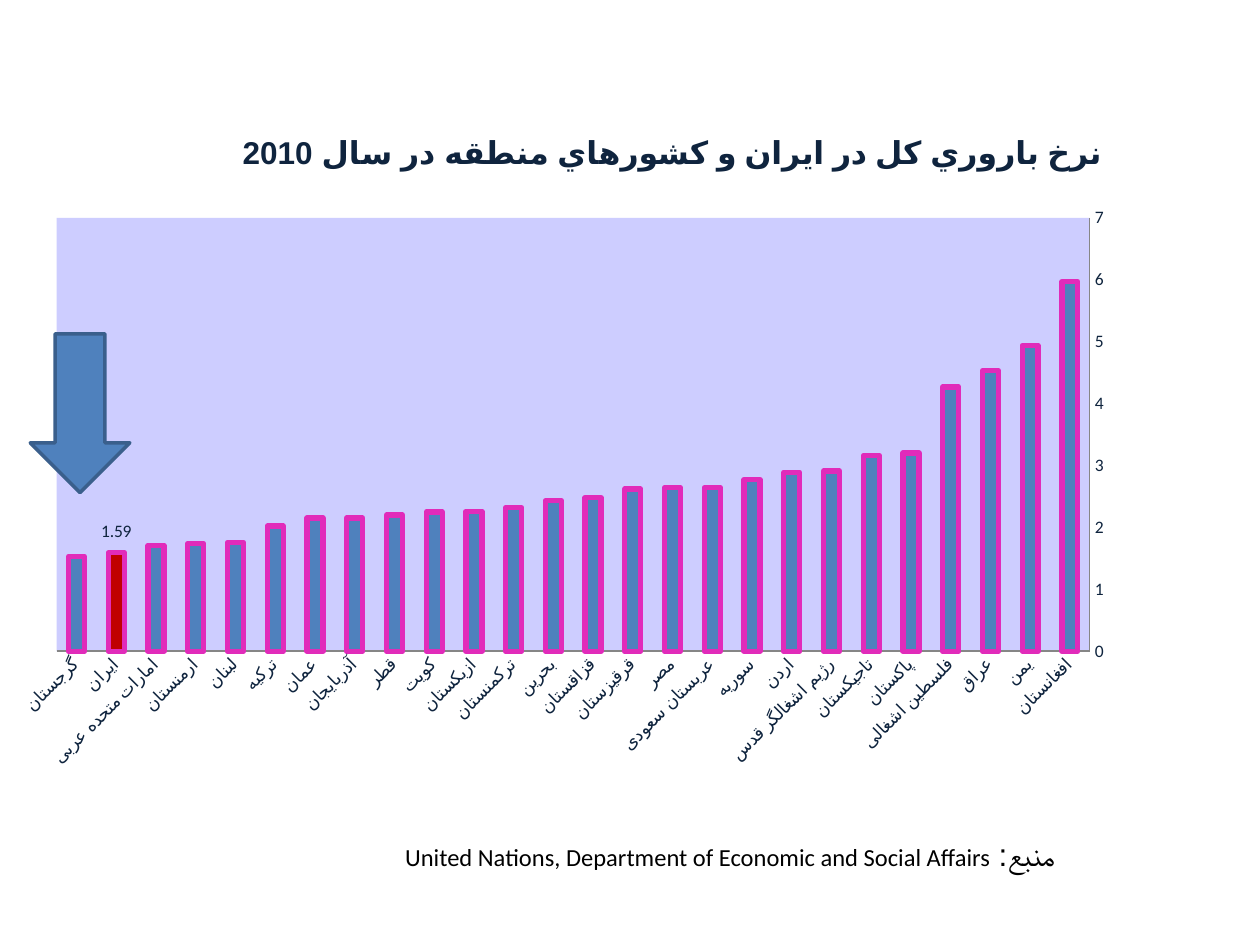
"""Build a slide charting total fertility rates in Iran and its region, 2010."""
from dataclasses import dataclass

from lxml.etree import SubElement
from pptx import Presentation
from pptx.chart.data import CategoryChartData
from pptx.dml.color import RGBColor as RGB
from pptx.enum.chart import XL_CHART_TYPE as ChartType
from pptx.enum.chart import XL_LABEL_POSITION as LabelPos
from pptx.enum.chart import XL_TICK_MARK as Tick
from pptx.enum.shapes import MSO_SHAPE as Shape
from pptx.enum.text import MSO_AUTO_SIZE as AutoSize
from pptx.enum.text import PP_ALIGN as Align
from pptx.oxml import parse_xml
from pptx.oxml.ns import nsdecls, qn
from pptx.util import Inches, Pt


@dataclass(frozen=True)
class Theme:
    font: str = "Calibri"
    arabic_font: str = "Arial"
    ink: str = "0F243E"
    black: str = "000000"
    bar: str = "4F81BD"
    bar_line: str = "E12BBA"
    highlight: str = "C00000"
    plot: str = "CDCDFF"
    axis: str = "868686"
    arrow_line: str = "3A5F8C"
    title_size: int = 18
    label_size: int = 10
    source_label_size: int = 18
    gap_size: int = 16
    source_size: int = 14


@dataclass(frozen=True)
class Rate:
    country: str
    value: float


THEME = Theme()
CHART_W, CHART_H = 8.94, 5.2
TITLE = "نرخ باروري کل در ايران و کشورهاي منطقه در سال 2010"
HIGHLIGHTED = "ایران"
RATES = [
    Rate("افغانستان", 5.97), Rate("یمن", 4.94), Rate("عراق", 4.53),
    Rate("فلسطین اشغالی", 4.27), Rate("پاکستان", 3.2), Rate("تاجیکستان", 3.16),
    Rate("رژيم اشغالگر قدس", 2.91), Rate("اردن", 2.89), Rate("سوریه", 2.77),
    Rate("عربستان سعودی", 2.64), Rate("مصر", 2.64), Rate("قرقیزستان", 2.62),
    Rate("قزاقستان", 2.48), Rate("بحرین", 2.43), Rate("ترکمنستان", 2.32),
    Rate("ازبکستان", 2.26), Rate("کویت", 2.25), Rate("قطر", 2.2),
    Rate("آذربایجان", 2.15), Rate("عمان", 2.15), Rate("ترکیه", 2.02),
    Rate("لبنان", 1.76), Rate("ارمنستان", 1.74), Rate("امارات متحده عربی", 1.71),
    Rate("ایران", 1.59), Rate("گرجستان", 1.53),
]


def paint(item, fill: str, line: str, width: float) -> None:
    item.fill.solid()
    item.fill.fore_color.rgb = RGB.from_string(fill)
    item.line.color.rgb = RGB.from_string(line)
    item.line.width = Pt(width)


def add_run(p, text: str, *, size: float, color: str = THEME.black,
            font: str = THEME.font, bold: bool = False) -> None:
    r = p.add_run()
    r.text = text
    r.font.name, r.font.size, r.font.bold = font, Pt(size), bold
    r.font.color.rgb = RGB.from_string(color)
    SubElement(r.font._element, qn("a:cs")).set("typeface", THEME.arabic_font)


def set_rtl(p, align) -> None:
    p.alignment = align
    p._p.get_or_add_pPr().set("rtl", "1")


def set_layout(element, index: int, **values) -> None:
    for old in element.findall(qn("c:layout")):
        element.remove(old)
    layout = parse_xml(f"<c:layout {nsdecls('c')}/>")
    manual = SubElement(layout, qn("c:manualLayout"))
    for key, value in values.items():
        SubElement(manual, qn(f"c:{key}")).set("val", str(value))
    element.insert(index, layout)


def style_axis(axis, width: float) -> None:
    axis.has_major_gridlines = False
    axis.major_tick_mark = axis.minor_tick_mark = Tick.NONE
    axis.format.line.color.rgb = RGB.from_string(THEME.axis)
    axis.format.line.width = Pt(width)


def style_bars(plot) -> None:
    plot.gap_width = 150
    plot.vary_by_categories = False
    series = plot.series[0]
    series.invert_if_negative = False
    index = [rate.country for rate in RATES].index(HIGHLIGHTED)
    point = series.points[index]
    for item, fill in ((series, THEME.bar), (point, THEME.highlight)):
        paint(item.format, fill, THEME.bar_line, 3)
        SubElement(item.format.line._get_or_add_ln(), qn("a:round"))
    point.data_label.position = LabelPos.OUTSIDE_END
    for label in series._element.iter(qn("c:dLbl")):
        set_layout(label, 1, x=0, y=-0.01)


def add_rate_chart(slide) -> None:
    data = CategoryChartData()
    data.categories = [rate.country for rate in RATES]
    data.add_series("Series 1", [rate.value for rate in RATES])
    chart = slide.shapes.add_chart(
        ChartType.COLUMN_CLUSTERED, Inches(0), Inches(0.99),
        Inches(CHART_W), Inches(CHART_H), data).chart
    chart.has_legend = False
    chart.font.name, chart.font.size = THEME.font, Pt(THEME.label_size)
    chart.font.color.rgb = RGB.from_string(THEME.ink)
    chart.has_title = True
    title = chart.chart_title
    p = title.text_frame.paragraphs[0]
    set_rtl(p, Align.CENTER)
    add_run(p, TITLE, size=THEME.title_size, color=THEME.ink,
            font=THEME.arabic_font, bold=True)
    set_layout(title._element, 1, xMode="edge", yMode="edge",
               x=1.88 / CHART_W, y=0.01 / CHART_H)

    countries, values = chart.category_axis, chart.value_axis
    style_axis(countries, 1)
    style_axis(values, 0.75)
    countries.reverse_order = True
    countries.tick_labels.font.size = Pt(THEME.label_size)
    countries._element.find(qn("c:txPr")).find(qn("a:bodyPr")).set("rot", "-2700000")
    values.minimum_scale, values.maximum_scale, values.major_unit = 0, 7, 1

    plot_area = chart._chartSpace.chart.plotArea
    set_layout(plot_area, 0, layoutTarget="inner", xMode="edge", yMode="edge",
               x=0.45 / CHART_W, y=0.74 / CHART_H,
               w=8.2 / CHART_W, h=3.44 / CHART_H)
    plot_area.append(parse_xml(
        f"<c:spPr {nsdecls('c', 'a')}><a:solidFill>"
        f'<a:srgbClr val="{THEME.plot}"/></a:solidFill></c:spPr>'))
    style_bars(chart.plots[0])


def add_source(slide) -> None:
    tf = slide.shapes.add_textbox(
        Inches(1.38), Inches(6.58), Inches(7.09), Inches(0.4)).text_frame
    tf.word_wrap = True
    tf.auto_size = AutoSize.SHAPE_TO_FIT_TEXT
    p = tf.paragraphs[0]
    set_rtl(p, Align.RIGHT)
    add_run(p, "منبع:", size=THEME.source_label_size)
    add_run(p, " ", size=THEME.gap_size)
    add_run(p, "United Nations, Department of Economic and Social Affairs",
            size=THEME.source_size)


def add_arrow(slide) -> None:
    sp = slide.shapes.add_shape(
        Shape.DOWN_ARROW, Inches(0.24), Inches(2.65), Inches(0.79), Inches(1.26))
    sp.shadow.inherit = False
    paint(sp, THEME.bar, THEME.arrow_line, 2)


def main() -> None:
    prs = Presentation()
    prs.slide_width, prs.slide_height = Inches(10), Inches(7.5)
    s = prs.slides.add_slide(prs.slide_layouts[6])
    add_rate_chart(s)
    add_source(s)
    add_arrow(s)
    prs.save("out.pptx")


if __name__ == "__main__":
    main()
